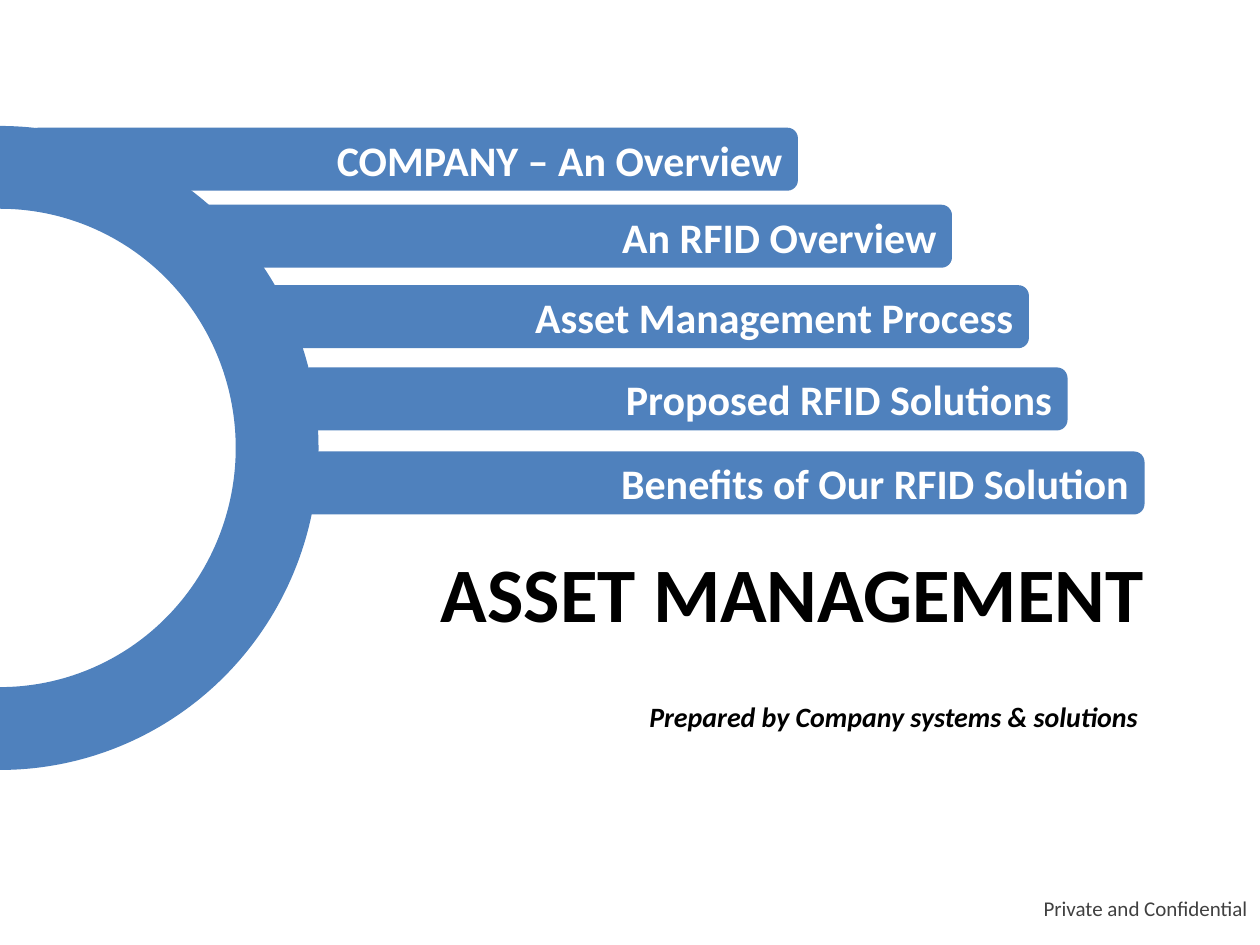
from pptx import Presentation
from pptx.dml.color import RGBColor
from pptx.enum import shapes, text
from pptx.util import Pt

HUES = {"blue": "4F81BD", "white": "FFFFFF", "black": "000000", "gray": "404040"}
BAR = {"size": 24, "bold": True}
# Topic, left, top and right edge of each bar
BARS = [
    ("COMPANY – An Overview", 16, 73, 456),
    ("An RFID Overview", 103, 117, 544),
    ("Asset Management Process", 140, 163, 588),
    ("Proposed RFID Solutions", 171, 210, 610),
    ("Benefits of Our RFID Solution", 168, 258, 654),
]
HIGH = 36


def color(name):
    return RGBColor.from_string(HUES[name])


def write(shape, words, hue, align, look, anchor="MIDDLE"):
    frame = shape.text_frame
    frame.word_wrap = True
    frame.vertical_anchor = getattr(text.MSO_ANCHOR, anchor)
    line = frame.paragraphs[0]
    line.text = words
    line.alignment = getattr(text.PP_ALIGN, align)
    font = line.runs[0].font
    font.name = "Calibri"
    font.color.rgb = color(hue)
    for key, value in look.items():
        setattr(font, key, Pt(value) if key == "size" else value)


def add_form(slide, kind, box):
    """Add a plain blue preset shape without line or shadow."""
    form = slide.shapes.add_shape(kind, *map(Pt, box))
    form.shadow.inherit = False
    form.fill.solid()
    form.fill.fore_color.rgb = color("blue")
    form.line.fill.background()
    return form


def add_arc(slide):
    arc = add_form(slide, shapes.MSO_SHAPE.BLOCK_ARC, (-184, 74, 368, 364))
    arc.rotation = 90
    for i, value in enumerate((107.97, 0.24, 0.13)):
        arc.adjustments[i] = value


def add_bar(slide, words, left, top, right):
    box = (left, top, right - left, HIGH)
    bar = add_form(slide, shapes.MSO_SHAPE.ROUNDED_RECTANGLE, box)
    write(bar, words, "white", "RIGHT", BAR)


def add_text(slide, box, *style):
    write(slide.shapes.add_textbox(*map(Pt, box)), *style)


def main():
    deck = Presentation()
    deck.slide_width, deck.slide_height = Pt(720), Pt(540)
    slide = deck.slides.add_slide(deck.slide_layouts[6])
    add_arc(slide)
    for bar in BARS:
        add_bar(slide, *bar)
    add_text(slide, (364, 396, 346, 60),
             "Prepared by Company systems & solutions", "black", "LEFT",
             {"size": 16, "bold": True, "italic": True}, "TOP")
    add_text(slide, (216, 298, 474, 80), "ASSET MANAGEMENT", "black", "CENTER",
             {"size": 44, "bold": True})
    add_text(slide, (504, 510, 216, 18), "Private and Confidential", "gray", "RIGHT",
             {"size": 12})
    deck.save("out.pptx")


if __name__ == "__main__":
    main()
